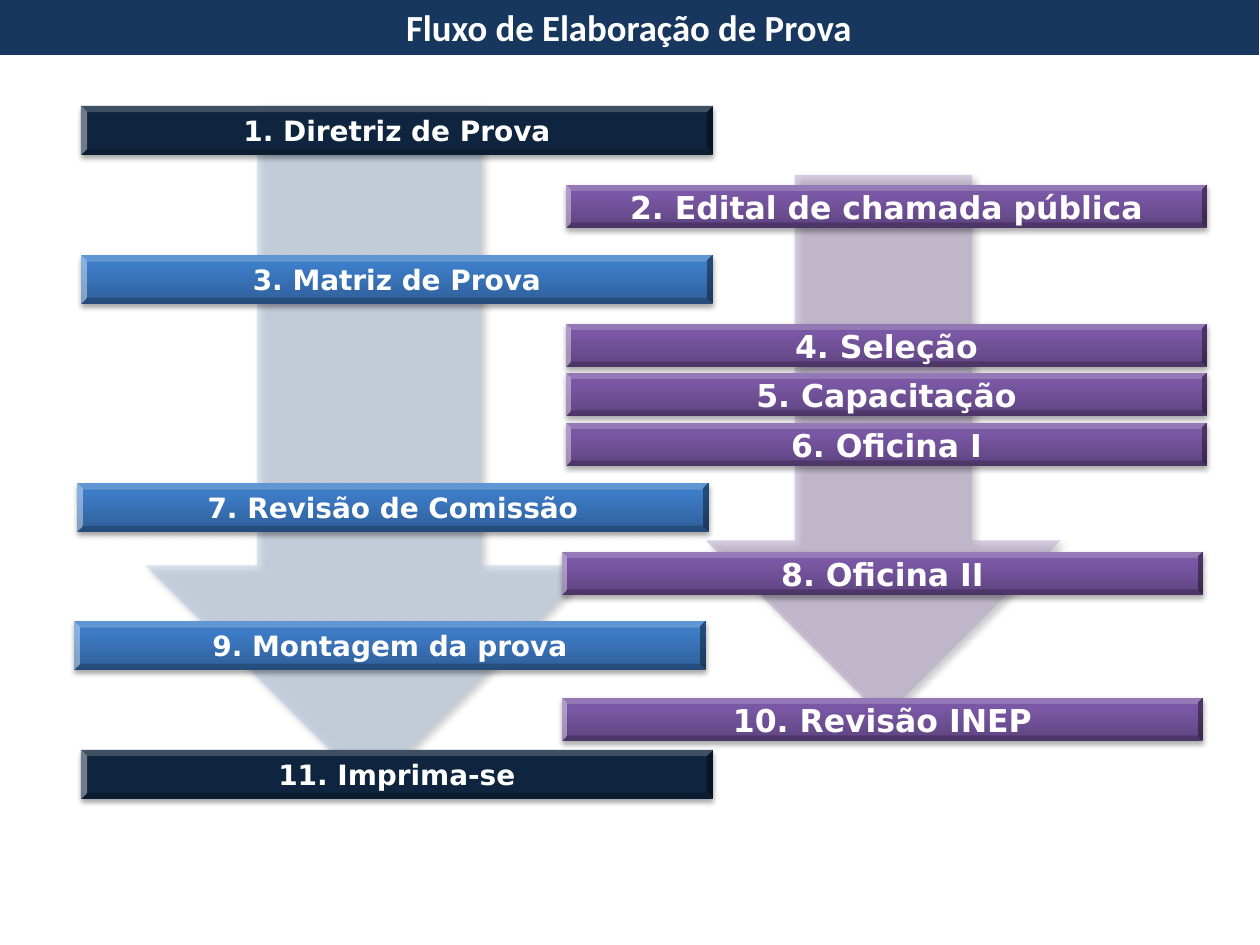
from dataclasses import dataclass
from typing import Any

from lxml.etree import SubElement
from pptx import Presentation
from pptx.dml.color import RGBColor
from pptx.enum.shapes import MSO_SHAPE as Preset
from pptx.enum.text import MSO_ANCHOR as Anchor, MSO_AUTO_SIZE as AutoSize, PP_ALIGN as Align
from pptx.oxml.ns import qn
from pptx.util import Emu, Pt

EMU_PER_PX = 914400 // 126


@dataclass(frozen=True)
class Theme:
    banner: str = "17375E"
    text: str = "FFFFFF"
    shadow: str = "000000"
    navy: tuple = ((0, "0F243E"),)
    blue: tuple = ((0, "2F5F99"), (80, "3D7CC7"), (100, "3A7CCB"))
    purple: tuple = ((0, "5F4480"), (80, "7B58A6"), (100, "7C57A8"))
    left_flow: str = "B9CDE5"
    right_flow: str = "B3A2C7"
    title_font: str = "Calibri"
    step_font: str = "DejaVu Sans"
    title_size: int = 21
    left_size: int = 16
    right_size: int = 18


THEME = Theme()


@dataclass(frozen=True)
class Lane:
    width: int
    height: int
    size: int


@dataclass(frozen=True)
class Step:
    label: str
    lane: Lane
    x: int
    y: int
    stops: tuple


@dataclass(frozen=True)
class Flow:
    x: int
    y: int
    width: int
    height: int
    color: str


@dataclass(frozen=True)
class Shadow:
    opacity: int
    blur: float
    distance: float
    angle: int


LEFT = Lane(632, 49, THEME.left_size)
RIGHT = Lane(641, 43, THEME.right_size)
FLOW_SHADOW = Shadow(40, 4, 3, 45)
STEP_SHADOW = Shadow(35, 3.1, 1.8, 90)

FLOWS = (
    Flow(145, 106, 449, 684, THEME.left_flow),
    Flow(706, 175, 355, 543, THEME.right_flow),
)
STEPS = (
    Step("1. Diretriz de Prova", LEFT, 81, 106, THEME.navy),
    Step("2. Edital de chamada pública", RIGHT, 566, 185, THEME.purple),
    Step("3. Matriz de Prova", LEFT, 81, 255, THEME.blue),
    Step("4. Seleção", RIGHT, 566, 324, THEME.purple),
    Step("5. Capacitação", RIGHT, 566, 373, THEME.purple),
    Step("6. Oficina I", RIGHT, 566, 423, THEME.purple),
    Step("7. Revisão de Comissão", LEFT, 77, 483, THEME.blue),
    Step("8. Oficina II", RIGHT, 562, 552, THEME.purple),
    Step("9. Montagem da prova", LEFT, 74, 621, THEME.blue),
    Step("10. Revisão INEP", RIGHT, 562, 698, THEME.purple),
    Step("11. Imprima-se", LEFT, 81, 750, THEME.navy),
)


def px(length: int) -> Emu:
    return Emu(length * EMU_PER_PX)


def apply(target: Any, values: dict[str, Any]) -> None:
    for name, value in values.items():
        setattr(target, name, value)


def paint(shape: Any, color: str) -> None:
    shape.fill.solid()
    shape.fill.fore_color.rgb = RGBColor.from_string(color)


def paint_stops(shape: Any, stops: tuple) -> None:
    if len(stops) == 1:
        paint(shape, stops[0][1])
        return
    shape.fill.gradient()
    shape.fill.gradient_angle = 90
    ramp = shape.element.spPr.find(qn("a:gradFill")).find(qn("a:gsLst"))
    ramp.clear()
    for percent, color in stops:
        stop = SubElement(ramp, qn("a:gs"), pos=str(percent * 1000))
        SubElement(stop, qn("a:srgbClr"), val=color)


def cast_shadow(shape: Any, shadow: Shadow) -> None:
    shape.shadow.inherit = False
    effects = shape.element.spPr.find(qn("a:effectLst"))
    outer = SubElement(
        effects, qn("a:outerShdw"), blurRad=str(Pt(shadow.blur)),
        dist=str(Pt(shadow.distance)), dir=str(shadow.angle * 60000), rotWithShape="0",
    )
    color = SubElement(outer, qn("a:srgbClr"), val=THEME.shadow)
    SubElement(color, qn("a:alpha"), val=str(shadow.opacity * 1000))


def write(shape: Any, label: str, font: str, size: int, frame_format: dict[str, Any]) -> None:
    frame = shape.text_frame
    frame.text = label
    apply(frame, frame_format)
    paragraph = frame.paragraphs[0]
    paragraph.alignment = Align.CENTER
    lettering = paragraph.runs[0].font
    apply(lettering, {"name": font, "size": Pt(size), "bold": True})
    lettering.color.rgb = RGBColor.from_string(THEME.text)


def draw_banner(slide: Any, label: str) -> None:
    banner = slide.shapes.title
    apply(banner, {"left": px(-1), "top": px(0), "width": px(1260), "height": px(55)})
    paint(banner, THEME.banner)
    write(banner, label, THEME.title_font, THEME.title_size, {
        "auto_size": AutoSize.NONE, "word_wrap": True, "vertical_anchor": Anchor.TOP,
        "margin_left": px(11), "margin_right": px(11),
        "margin_top": px(5), "margin_bottom": px(5),
    })


def draw_flow(slide: Any, flow: Flow) -> None:
    arrow = slide.shapes.add_shape(
        Preset.DOWN_ARROW, px(flow.x), px(flow.y), px(flow.width), px(flow.height))
    paint(arrow, flow.color)
    color = arrow.element.spPr.find(qn("a:solidFill")).find(qn("a:srgbClr"))
    SubElement(color, qn("a:alpha"), val="50000")
    arrow.line.fill.background()
    cast_shadow(arrow, FLOW_SHADOW)


def draw_step(slide: Any, step: Step) -> None:
    lane = step.lane
    bar = slide.shapes.add_shape(
        Preset.BEVEL, px(step.x), px(step.y), px(lane.width), px(lane.height))
    bar.adjustments[0] = 0.125
    paint_stops(bar, step.stops)
    bar.line.fill.background()
    cast_shadow(bar, STEP_SHADOW)
    write(bar, step.label, THEME.step_font, lane.size,
          {"word_wrap": False, "vertical_anchor": Anchor.MIDDLE})


def main() -> None:
    deck = Presentation()
    apply(deck, {"slide_width": px(1260), "slide_height": px(945)})
    slide = deck.slides.add_slide(deck.slide_layouts[5])
    draw_banner(slide, "Fluxo de Elaboração de Prova")
    for flow in FLOWS:
        draw_flow(slide, flow)
    for step in STEPS:
        draw_step(slide, step)
    deck.save("out.pptx")


if __name__ == "__main__":
    main()
